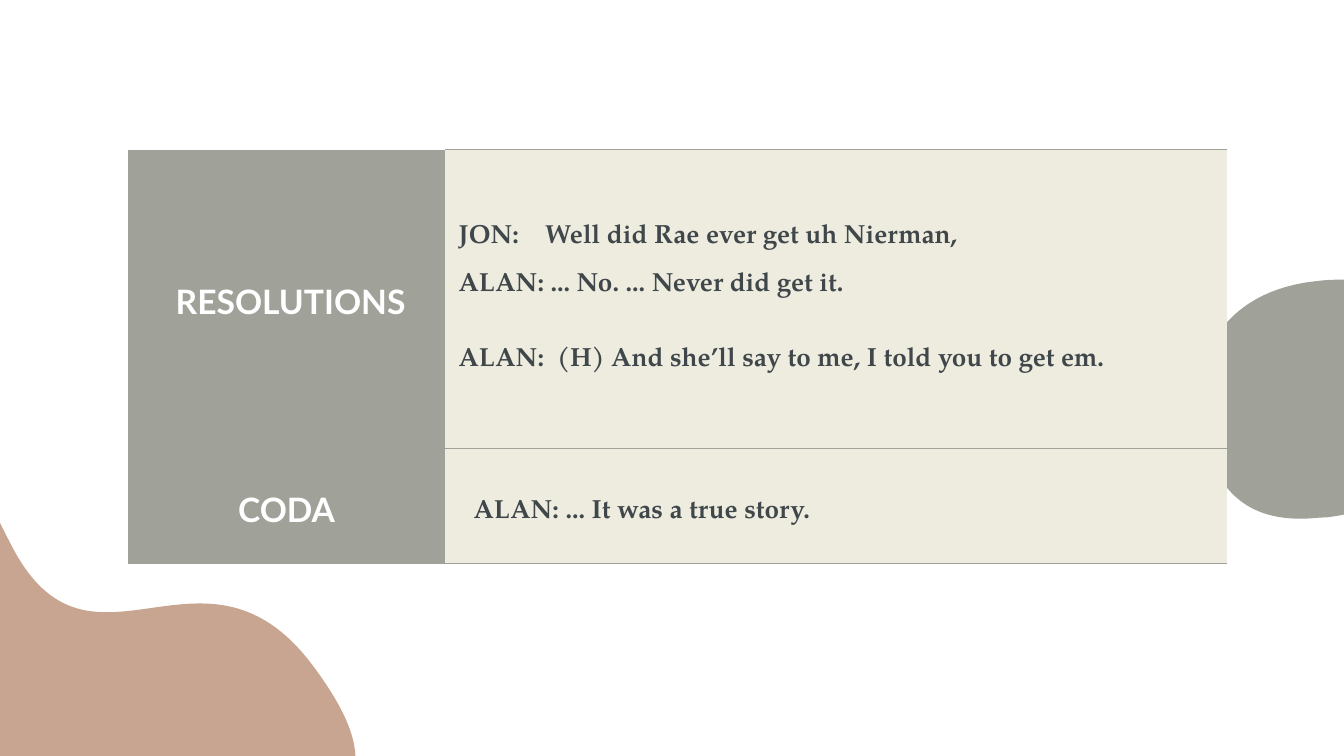
from dataclasses import dataclass

from lxml.etree import SubElement
from pptx import Presentation
from pptx.dml.color import RGBColor
from pptx.enum.text import MSO_ANCHOR, PP_ALIGN
from pptx.oxml.ns import qn
from pptx.util import Pt

SAGE, CLAY, CREAM, INK, WHITE = "A0A299", "C8A591", "EDECDF", "40474B", "FFFFFF"
HEAD_FONT, BODY_FONT = "Lato", "TeX Gyre Pagella"


@dataclass
class Blob:
    """A closed outline: a start point and cubic segments, in points."""
    color: str
    start: tuple
    curves: list


@dataclass
class Line:
    """A paragraph with an optional speaker, and its spacing in points."""
    text: str
    speaker: str = ""
    gap: float = 0
    before: float = 0
    margin: float = 0
    spacing: float = 1.0


@dataclass
class Row:
    """A story stage: its label, the lines that show it and its height."""
    label: Line
    lines: list
    height: float


BLOBS = [
    Blob(CLAY, (-55.4, 224.6), [
        (-52.6, 223.2, -49.3, 223.2, -44.6, 223.9),
        (-20.2, 227.5, -20.2, 241.2, 5.8, 291.6),
        (48.2, 375.1, 109.4, 277.2, 168.5, 357.8),
        (200.9, 401.8, 196.6, 424.8, 161.3, 444.2),
        (150.5, 450, 137.5, 455.8, 121.7, 461.5),
        (52.6, 487.4, -2.9, 448.6, -29.5, 352.1),
        (-52.6, 271.4, -69.1, 231.8, -55.4, 224.6)]),
    Blob(SAGE, (720.7, 149.8), [
        (716.4, 149.8, 711.4, 149.8, 706.3, 150.5),
        (661.7, 154.8, 641.5, 183.6, 640.8, 217.4),
        (647.3, 257, 662.4, 277.9, 697, 277.9),
        (701.3, 277.9, 706.3, 277.2, 710.6, 277.2),
        (754.6, 271.4, 786.2, 250.6, 776.9, 195.1),
        (771.8, 162.7, 754.6, 149.8, 720.7, 149.8)]),
]
ROWS = [
    Row(Line("RESOLUTIONS", margin=4.3, spacing=1.15), [
        Line("Well did Rae ever get uh Nierman,", "JON:", gap=10.5, before=12),
        Line("... No. ... Never did get it.", "ALAN:", before=12),
        Line("And she’ll say to me, I told you to get em.", "ALAN: (H)", before=26.5)],
        160),
    Row(Line("CODA", spacing=1.15),
        [Line("... It was a true story.", "ALAN:", margin=8, spacing=1.5)], 62),
]
ROWS[0].lines[2] = Line("(H) And she’ll say to me, I told you to get em.", "ALAN:",
                        gap=3.5, before=26.5)


def rgb(color: str) -> RGBColor:
    """Turn a hex string into a colour."""
    return RGBColor.from_string(color)


def draw_blob(s, blob: Blob) -> None:
    """Draw a filled blob, joining each three points into one curve."""
    x, y = blob.start
    builder = s.shapes.build_freeform(Pt(x), Pt(y))
    builder.add_line_segments([(Pt(c[i]), Pt(c[i + 1]))
                               for c in blob.curves for i in (0, 2, 4)])
    sp = builder.convert_to_shape()
    outline = next(sp._element.iter(qn("a:path")))
    steps = outline.findall(qn("a:lnTo"))
    for i in range(0, len(steps), 3):
        curve = SubElement(outline, qn("a:cubicBezTo"))
        for step in steps[i:i + 3]:
            curve.append(step[0])
            outline.remove(step)
    SubElement(outline, qn("a:close"))
    sp.shadow.inherit = False
    sp.fill.solid()
    sp.fill.fore_color.rgb = rgb(blob.color)
    sp.line.fill.background()


def write(p, line: Line, *, size: float, font: str, color: str, align=PP_ALIGN.LEFT) -> None:
    """Write one bold line, widening the space after its speaker."""
    p.alignment, p.line_spacing, p.space_before = align, line.spacing, Pt(line.before)
    pPr = p._p.get_or_add_pPr()
    pPr.set("marL", str(Pt(line.margin)))
    pPr.set("indent", "0")
    parts = [line.speaker, " ", line.text] if line.speaker else [line.text]
    for part in parts:
        r = p.add_run()
        r.text = part
        r.font.size, r.font.name, r.font.bold = Pt(size), font, True
        r.font.color.rgb = rgb(color)
        if part == " " and line.gap:
            r._r.get_or_add_rPr().set("spc", str(round(line.gap * 100)))


def format_cell(cell, fill: str, ruled: bool) -> None:
    """Fill a cell and rule its top and bottom if asked."""
    cell.vertical_anchor = MSO_ANCHOR.MIDDLE
    cell.margin_left = cell.margin_right = cell.margin_top = cell.margin_bottom = Pt(7.2)
    cell.fill.solid()
    cell.fill.fore_color.rgb = rgb(fill)
    tcPr = cell._tc.get_or_add_tcPr()
    for i, side in enumerate("LRTB"):
        ln = SubElement(tcPr, qn(f"a:ln{side}"), w=str(Pt(0.75)))
        if ruled and side in "TB":
            SubElement(SubElement(ln, qn("a:solidFill")), qn("a:srgbClr"), val=SAGE)
        else:
            SubElement(ln, qn("a:noFill"))
        tcPr.insert(i, ln)


def draw_table(s, rows: list) -> None:
    """Draw the table of story stages."""
    widths = (169.9, 419)
    table = s.shapes.add_table(len(rows), 2, Pt(68.6), Pt(80.1), Pt(sum(widths)),
                               Pt(sum(row.height for row in rows))).table
    table.first_row = table.horz_banding = False
    for column, width in zip(table.columns, widths):
        column.width = Pt(width)
    for i, row in enumerate(rows):
        table.rows[i].height = Pt(row.height)
        label, speech = table.cell(i, 0), table.cell(i, 1)
        format_cell(label, SAGE, False)
        format_cell(speech, CREAM, True)
        write(label.text_frame.paragraphs[0], row.label, size=18, font=HEAD_FONT,
              color=WHITE, align=PP_ALIGN.CENTER)
        tf = speech.text_frame
        for j, line in enumerate(row.lines):
            p = tf.add_paragraph() if j else tf.paragraphs[0]
            write(p, line, size=14, font=BODY_FONT, color=INK)


def main() -> None:
    """Build and save the slide."""
    prs = Presentation()
    prs.slide_width, prs.slide_height = Pt(720), Pt(405)
    s = prs.slides.add_slide(prs.slide_layouts[6])
    for blob in BLOBS:
        draw_blob(s, blob)
    draw_table(s, ROWS)
    prs.save("out.pptx")


if __name__ == "__main__":
    main()
